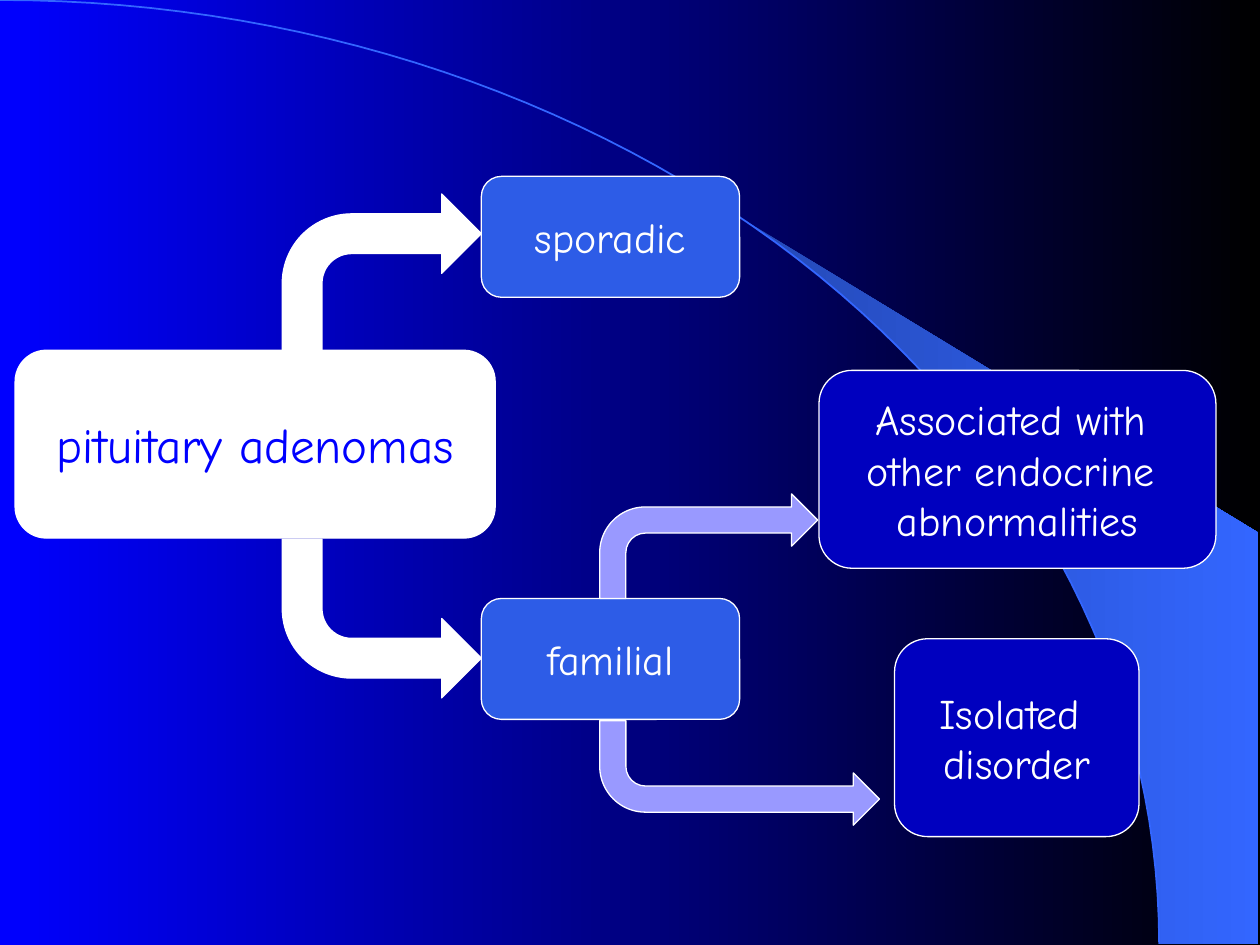
"""Build a slide that classifies pituitary adenomas as a branching diagram."""
from math import asin, cos, pi, sin

from pptx import Presentation
from pptx.dml.color import RGBColor
from pptx.enum.shapes import MSO_SHAPE
from pptx.enum.text import MSO_ANCHOR, PP_ALIGN
from pptx.util import Inches, Pt

BOX, ARROW = MSO_SHAPE.ROUNDED_RECTANGLE, MSO_SHAPE.BENT_ARROW
MIDDLE, CENTER = MSO_ANCHOR.MIDDLE, PP_ALIGN.CENTER
COLORS = {
    "white": "FFFFFF", "blue": "0000FF", "black": "000000",
    "branch": "2D5CE7", "leaf": "0000BF", "lilac": "9999FF",
    "arc": "3366FF", "arc_dark": "2449B6",
}
FONT = "Comic Neue"
ARC_WIDTH, ARC_HEIGHT = 9.2, 7.49


def rgb(name):
    """Return the named colour."""
    return RGBColor.from_string(COLORS[name])


def arc_points(start_x, steps=60):
    """Return points on the quarter ellipse from start_x to its right end."""
    first = asin(start_x / ARC_WIDTH)
    angles = [first + (pi / 2 - first) * i / steps for i in range(steps + 1)]
    return [(ARC_WIDTH * sin(a), ARC_HEIGHT * (1 - cos(a))) for a in angles]


class Diagram:
    """Hold the style and the current slide."""

    def __init__(self, slide):
        """Keep the slide to draw on."""
        self.slide = slide

    def gradient(self, fill, *names):
        """Apply a left-to-right gradient."""
        fill.gradient()
        fill.gradient_angle = 0
        for stop, name in zip(fill.gradient_stops, names):
            stop.color.rgb = rgb(name)

    def outline(self, s, color, width):
        """Set the line and remove the shadow."""
        s.shadow.inherit = False
        s.line.color.rgb = rgb(color)
        s.line.width = Pt(width)

    def freeform(self, points, close):
        """Draw a path through points given in inches."""
        path = [(Inches(x), Inches(y)) for x, y in points]
        builder = self.slide.shapes.build_freeform(*path[0])
        builder.add_line_segments(path[1:], close=close)
        s = builder.convert_to_shape()
        s.shadow.inherit = False
        return s

    def wedge(self):
        """Draw the shaded area right of the arc."""
        s = self.freeform(arc_points(5.89) + [(9.99, 7.49), (9.99, 4.23)], True)
        self.gradient(s.fill, "arc_dark", "arc")
        s.line.fill.background()

    def arc(self):
        """Draw the thin arc across the slide."""
        s = self.freeform(arc_points(0), False)
        s.fill.background()
        self.outline(s, "arc", 1)

    def shape(self, kind, at, fill):
        """Draw a filled preset shape with a white line."""
        s = self.slide.shapes.add_shape(kind, *map(Inches, at))
        s.fill.solid()
        s.fill.fore_color.rgb = rgb(fill)
        self.outline(s, "white", 0.75)
        return s

    def box(self, text, at, fill, color="white", size=24):
        """Draw a rounded box with centred text."""
        tf = self.shape(BOX, at, fill).text_frame
        tf.text = text
        for name, value in {"word_wrap": False, "vertical_anchor": MIDDLE}.items():
            setattr(tf, name, value)
        for p in tf.paragraphs:
            p.alignment = CENTER
            for r in p.runs:
                for name, value in {"name": FONT, "size": Pt(size)}.items():
                    setattr(r.font, name, value)
                r.font.color.rgb = rgb(color)

    def arrow(self, at, fill, down=False):
        """Draw a bent arrow that turns right, upward or downward."""
        s = self.shape(ARROW, at, fill)
        if down:
            s._element.spPr.get_or_add_xfrm().set("flipV", "1")


def main():
    """Build and save the presentation."""
    prs = Presentation()
    prs.slide_width, prs.slide_height = Inches(10), Inches(7.5)
    slide = prs.slides.add_slide(prs.slide_layouts[6])
    diagram = Diagram(slide)
    diagram.gradient(slide.background.fill, "blue", "black")
    diagram.wedge()
    diagram.arc()

    diagram.box("pituitary adenomas", (0.12, 2.78, 3.81, 1.49), "white", "blue", 28)
    for text, top in (("sporadic", 1.4), ("familial", 4.75)):
        diagram.box(text, (3.82, top, 2.05, 0.96), "branch")
    diagram.box("Associated with \nother endocrine \nabnormalities",
                (6.5, 2.94, 3.15, 1.57), "leaf")
    diagram.box("Isolated \ndisorder", (7.1, 5.07, 1.94, 1.57), "leaf")

    diagram.arrow((2.24, 1.54, 1.58, 1.26), "white")
    diagram.arrow((2.24, 4.28, 1.58, 1.26), "white", down=True)
    diagram.arrow((4.76, 5.72, 2.22, 0.83), "lilac", down=True)
    diagram.arrow((4.76, 3.92, 1.73, 0.83), "lilac")
    prs.save("out.pptx")


if __name__ == "__main__":
    main()
